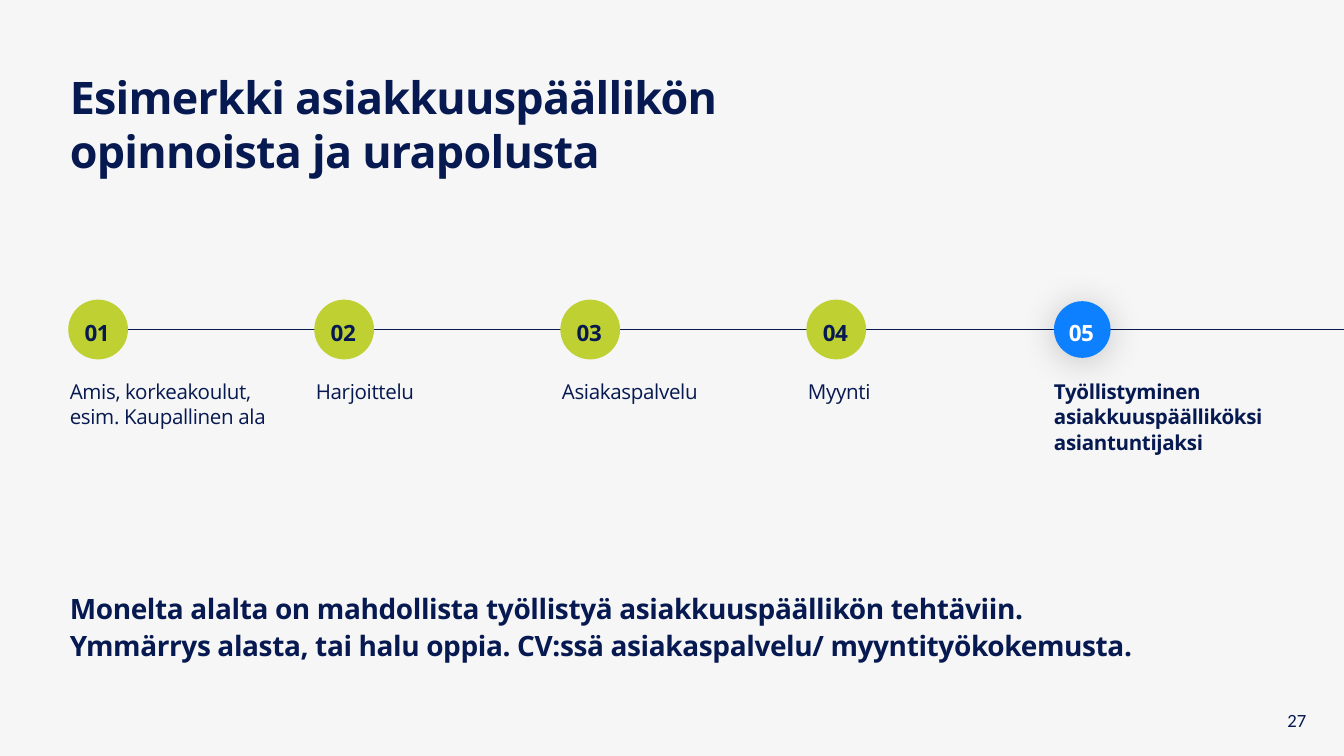
import dataclasses

import lxml.etree
import pptx
import pptx.dml.color
import pptx.enum.shapes
import pptx.enum.text
import pptx.oxml.ns
import pptx.util

Cm = pptx.util.Cm
Pt = pptx.util.Pt
Anchor = pptx.enum.text.MSO_ANCHOR

COLORS = {
    "background": "F6F6F6",
    "navy": "071951",
    "lime": "BED032",
    "blue": "0D80FF",
    "white": "FFFFFF",
    "shadow": "000000",
}
LEFT = 1.32
STEP_GAP = 4.65
CIRCLE_TOP = 5.69
CIRCLE_SIZE = 1.07
LINE_HEIGHT = CIRCLE_TOP + CIRCLE_SIZE / 2


@dataclasses.dataclass(frozen=True)
class TextStyle:
    size: float
    bold: bool = False
    color: str = "navy"
    font: str = "Open Sans"
    line_height: float | None = None
    tracking: float = 0


@dataclasses.dataclass(frozen=True)
class Step:
    label: str
    width: float
    height: float = 0.48
    is_goal: bool = False


TITLE = TextStyle(24, bold=True, line_height=28.8, tracking=-0.4)
SUMMARY = TextStyle(15, bold=True, line_height=19.5, tracking=-0.2)
LABEL = TextStyle(11, line_height=13.7, tracking=-0.2)
NUMBER = TextStyle(12, bold=True, line_height=15.6, tracking=-0.2)
PAGE_NUMBER = TextStyle(10, font="Calibri")

STEPS = [
    Step("Amis, korkeakoulut, esim. Kaupallinen ala", 3.91, 0.97),
    Step("Harjoittelu", 3.68),
    Step("Asiakaspalvelu", 4.04),
    Step("Myynti", 3.15),
    Step("Työllistyminen asiakkuuspäälliköksi asiantuntijaksi", 4.67, 1.45, True),
]
SUMMARY_LINES = [
    "Monelta alalta on mahdollista työllistyä asiakkuuspäällikön tehtäviin.",
    "Ymmärrys alasta, tai halu oppia. CV:ssä asiakaspalvelu/ myyntityökokemusta.",
]


def rgb(name: str) -> pptx.dml.color.RGBColor:
    return pptx.dml.color.RGBColor.from_string(COLORS[name])


def write_text(box, lines: list[str], style: TextStyle,
               anchor=Anchor.TOP, inset: float = 0) -> None:
    frame = box.text_frame
    frame.word_wrap = True
    frame.auto_size = pptx.enum.text.MSO_AUTO_SIZE.NONE
    frame.vertical_anchor = anchor
    frame.margin_left = frame.margin_right = Cm(inset)
    frame.margin_top = frame.margin_bottom = Cm(inset / 2)
    frame.text = "\n".join(lines)
    for para in frame.paragraphs:
        para.alignment = pptx.enum.text.PP_ALIGN.LEFT
        if style.line_height:
            para.line_spacing = Pt(style.line_height)
        para.font.name = style.font
        para.font.size = Pt(style.size)
        para.font.bold = style.bold
        para.font.color.rgb = rgb(style.color)
        for span in para.runs:
            span._r.get_or_add_rPr().set("spc", str(round(style.tracking * 100)))


def add_text(page, left: float, top: float, width: float, height: float,
             lines: list[str], style: TextStyle,
             anchor=Anchor.TOP, inset: float = 0) -> None:
    box = page.shapes.add_textbox(Cm(left), Cm(top), Cm(width), Cm(height))
    write_text(box, lines, style, anchor, inset)


def add_timeline(page) -> None:
    line = page.shapes.add_connector(
        pptx.enum.shapes.MSO_CONNECTOR.STRAIGHT,
        Cm(LEFT + CIRCLE_SIZE / 2), Cm(LINE_HEIGHT), Cm(25.4), Cm(LINE_HEIGHT))
    line.line.color.rgb = rgb("navy")
    line.line.width = Pt(0.83)
    lxml.etree.SubElement(line._element.spPr, pptx.oxml.ns.qn("a:effectLst"))


def add_glow(circle) -> None:
    qn = pptx.oxml.ns.qn
    effects = circle._element.spPr.find(qn("a:effectLst"))
    shadow = lxml.etree.SubElement(
        effects, qn("a:outerShdw"), blurRad=str(Pt(20)), dist=str(Pt(2)),
        dir="5400000", algn="ctr", rotWithShape="0")
    color = lxml.etree.SubElement(shadow, qn("a:srgbClr"), val=COLORS["shadow"])
    lxml.etree.SubElement(color, qn("a:alpha"), val="20000")


def add_step(page, index: int, step: Step) -> None:
    left = LEFT + index * STEP_GAP
    circle = page.shapes.add_shape(
        pptx.enum.shapes.MSO_SHAPE.OVAL,
        Cm(left), Cm(CIRCLE_TOP), Cm(CIRCLE_SIZE), Cm(CIRCLE_SIZE))
    circle.fill.solid()
    circle.fill.fore_color.rgb = rgb("blue" if step.is_goal else "lime")
    if step.is_goal:
        circle.line.fill.background()
    else:
        circle.line.color.rgb = rgb("lime")
        circle.line.width = Pt(1.67)
    circle.shadow.inherit = False
    if step.is_goal:
        add_glow(circle)

    number_style = dataclasses.replace(NUMBER, color="white" if step.is_goal else "navy")
    add_text(page, left + 0.28, 5.97, 5.1, 0.56, [f"{index + 1:02d}"],
             number_style, Anchor.BOTTOM)
    add_text(page, left, 7.14, step.width, step.height, [step.label],
             dataclasses.replace(LABEL, bold=step.is_goal))


def main() -> None:
    deck = pptx.Presentation()
    deck.slide_width = Cm(25.4)
    deck.slide_height = Cm(14.28)
    page = deck.slides.add_slide(deck.slide_layouts.get_by_name("Title Only"))
    page.background.fill.solid()
    page.background.fill.fore_color.rgb = rgb("background")

    title = page.shapes.title
    title.left, title.top = Cm(LEFT), Cm(1.32)
    title.width, title.height = Cm(16.54), Cm(2.03)
    write_text(title, ["Esimerkki asiakkuuspäällikön opinnoista ja urapolusta"], TITLE)

    add_timeline(page)
    for index, step in enumerate(STEPS):
        add_step(page, index, step)

    add_text(page, LEFT, 11.13, 23.29, 1.37, SUMMARY_LINES, SUMMARY)
    add_text(page, 24.08, 13.18, 1.12, 0.84, ["27"], PAGE_NUMBER, Anchor.MIDDLE, 0.25)
    deck.save("out.pptx")


if __name__ == "__main__":
    main()
